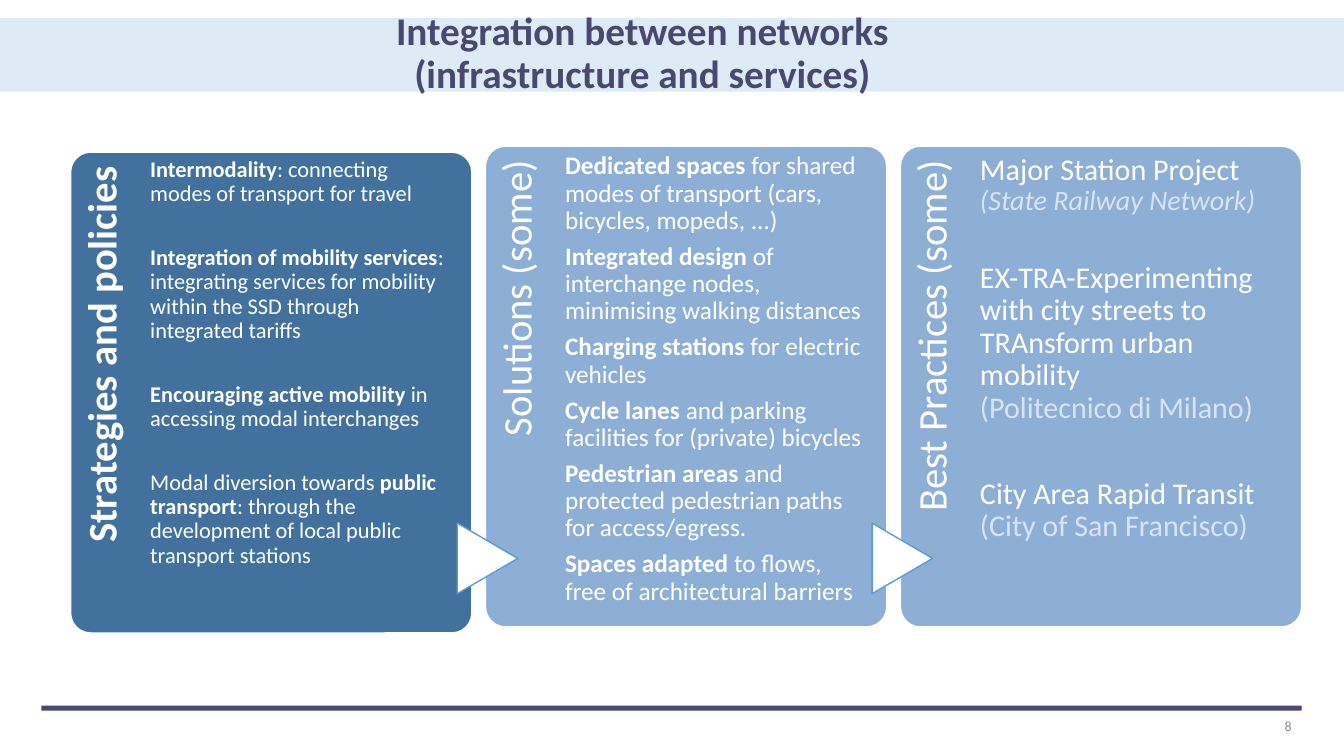
from pptx import Presentation
from pptx.dml.color import RGBColor
from pptx.enum.shapes import MSO_SHAPE as Preset
from pptx.enum.text import MSO_ANCHOR as Anchor, MSO_AUTO_SIZE as AutoSize, PP_ALIGN as Align
from pptx.util import Inches, Pt

WIDTH, HEIGHT = 13.33, 7.5
MARGIN, COLUMN_PITCH = 0.7, 4.115
PANEL_WIDTH, PANEL_HEIGHT = 3.98, 4.77
LABEL_WIDTH, LABEL_LENGTH = 0.8, 3.91
BODY_OFFSET, BODY_WIDTH = 0.79, 2.96
ARROW_WIDTH, ARROW_HEIGHT, ARROW_TOP = 0.7, 0.6, 5.24
COLORS = {
    "band": "DEEBF7", "navy": "484870", "number": "8C8C8C",
    "dark": "41719C", "light": "8DAFD6", "outline": "5B9BD5",
    "white": "FFFFFF", "pale": "DAE3F3",
}
COLUMNS = [
    {"label": "Strategies and policies", "bold": True, "fill": "dark",
     "top": 1.51, "inset": 0.06, "size": 16, "gaps": [28.5] * 3,
     "paragraphs": [
         [("Intermodality", "bold"), (": connecting modes of transport for travel", "plain")],
         [("Integration of mobility services", "bold"),
          (": integrating services for mobility within the SSD through integrated tariffs", "plain")],
         [("Encouraging active mobility ", "bold"), ("in accessing modal interchanges", "plain")],
         [("Modal diversion towards ", "plain"), ("public transport", "bold"),
          (": through the development of local public transport stations", "plain")],
     ]},
    {"label": "Solutions (some)", "bold": False, "fill": "light",
     "top": 1.45, "inset": 0.07, "size": 18, "gaps": [6.3] * 5,
     "paragraphs": [
         [("Dedicated spaces ", "bold"),
          ("for shared modes of transport (cars, bicycles, mopeds, ...)", "plain")],
         [("Integrated design ", "bold"),
          ("of interchange nodes, minimising walking distances", "plain")],
         [("Charging stations ", "bold"), ("for electric vehicles", "plain")],
         [("Cycle lanes ", "bold"), ("and parking facilities for (private) bicycles", "plain")],
         [("Pedestrian areas ", "bold"),
          ("and protected pedestrian paths for access/egress.", "plain")],
         [("Spaces adapted", "bold"), (" to flows, free of architectural barriers", "plain")],
     ]},
    {"label": "Best Practices (some)", "bold": False, "fill": "light",
     "top": 1.45, "inset": 0.08, "size": 21.5, "gaps": [32.5, 38],
     "paragraphs": [
         [("Major Station Project", "plain"), ("", "break"),
          ("(State Railway Network)", "italic")],
         [("EX-TRA-Experimenting with city streets to TRAnsform urban mobility", "plain"),
          ("", "break"), ("(Politecnico di Milano)", "pale")],
         [("City Area Rapid Transit", "plain"), ("", "break"),
          ("(City of San Francisco)", "pale")],
     ]},
]


def color(name):
    return RGBColor.from_string(COLORS[name])


def box(left, top, width, height):
    return [Inches(value) for value in (left, top, width, height)]


def set_font(font, size, color_name, bold=False):
    font.name, font.size, font.bold = "Calibri", Pt(size), bold
    font.color.rgb = color(color_name)


def set_frame(frame, insets, anchor=Anchor.TOP):
    frame.word_wrap, frame.auto_size = True, AutoSize.NONE
    frame.vertical_anchor = anchor
    (frame.margin_left, frame.margin_top,
     frame.margin_right, frame.margin_bottom) = box(*insets)


def add_block(slide, preset, area, fill, line=None):
    shape = slide.shapes.add_shape(preset, *box(*area))
    shape.shadow.inherit = False
    shape.fill.solid()
    shape.fill.fore_color.rgb = color(fill)
    if line:
        shape.line.color.rgb = color(line)
        shape.line.width = Pt(1)
    else:
        shape.line.fill.background()
    return shape


def add_text(slide, area, insets, anchor=Anchor.TOP):
    shape = slide.shapes.add_textbox(*box(*area))
    set_frame(shape.text_frame, insets, anchor)
    return shape


def add_title(slide, text):
    title = slide.shapes.title
    title.left, title.top, title.width, title.height = box(0.62, 0.18, 11.5, 0.72)
    set_frame(title.text_frame, (0.1, 0.05, 0.1, 0.05), Anchor.MIDDLE)
    title.text_frame.text = text
    paragraph = title.text_frame.paragraphs[0]
    paragraph.alignment, paragraph.line_spacing = Align.CENTER, 0.9
    set_font(paragraph.font, 28, "navy", True)
    band = add_block(slide, Preset.RECTANGLE, (0, 0.18, WIDTH, 0.73), "band")
    title.element.addprevious(band.element)


def add_footer(slide, number):
    add_block(slide, Preset.RECTANGLE, (0.41, 7, 12.5, 0.05), "navy")
    shape = add_text(slide, (9.91, 7.04, 3, 0.33), (0.1, 0.05, 0.1, 0.05), Anchor.MIDDLE)
    paragraph = shape.text_frame.paragraphs[0]
    paragraph.text, paragraph.alignment = number, Align.RIGHT
    set_font(paragraph.font, 10, "number")


def add_label(slide, left, column):
    area = (left + (LABEL_WIDTH - LABEL_LENGTH) / 2,
            column["top"] + (LABEL_LENGTH - LABEL_WIDTH) / 2, LABEL_LENGTH, LABEL_WIDTH)
    shape = add_text(slide, area, (0, 0.11, 0.14, 0))
    shape.rotation = 270
    paragraph = shape.text_frame.paragraphs[0]
    paragraph.text, paragraph.alignment = column["label"], Align.RIGHT
    paragraph.line_spacing = 0.9
    set_font(paragraph.font, 29, "white", column["bold"])


def add_run(paragraph, text, style):
    if style == "break":
        paragraph.add_line_break()
        return
    run = paragraph.add_run()
    run.text = text
    if style == "bold":
        run.font.bold = True
    if style in ("italic", "pale"):
        run.font.color.rgb = color("pale")
    if style == "italic":
        run.font.italic, run.font.size = True, Pt(20)


def add_body(slide, left, column):
    area = (left + BODY_OFFSET, column["top"], BODY_WIDTH, PANEL_HEIGHT)
    frame = add_text(slide, area, (0, column["inset"], 0, 0)).text_frame
    for index, (runs, gap) in enumerate(zip(column["paragraphs"], [0] + column["gaps"])):
        paragraph = frame.add_paragraph() if index else frame.paragraphs[0]
        paragraph.line_spacing, paragraph.space_before = 0.9, Pt(gap)
        set_font(paragraph.font, column["size"], "white")
        for text, style in runs:
            add_run(paragraph, text, style)


def add_column(slide, index, column):
    left = MARGIN + index * COLUMN_PITCH
    panel = add_block(slide, Preset.ROUNDED_RECTANGLE,
                      (left, column["top"], PANEL_WIDTH, PANEL_HEIGHT), column["fill"], "white")
    panel.adjustments[0] = 0.05
    add_label(slide, left, column)
    if index:
        arrow = add_block(slide, Preset.FLOWCHART_EXTRACT,
                          (left - 0.33, ARROW_TOP, ARROW_WIDTH, ARROW_HEIGHT),
                          "white", "outline")
        arrow.rotation = 90
    add_body(slide, left, column)


def main():
    presentation = Presentation()
    presentation.slide_width, presentation.slide_height = Inches(WIDTH), Inches(HEIGHT)
    slide = presentation.slides.add_slide(presentation.slide_layouts[5])
    add_title(slide, "Integration between networks\v(infrastructure and services)")
    add_footer(slide, "8")
    for index, column in enumerate(COLUMNS):
        add_column(slide, index, column)
    presentation.save("out.pptx")


if __name__ == "__main__":
    main()
